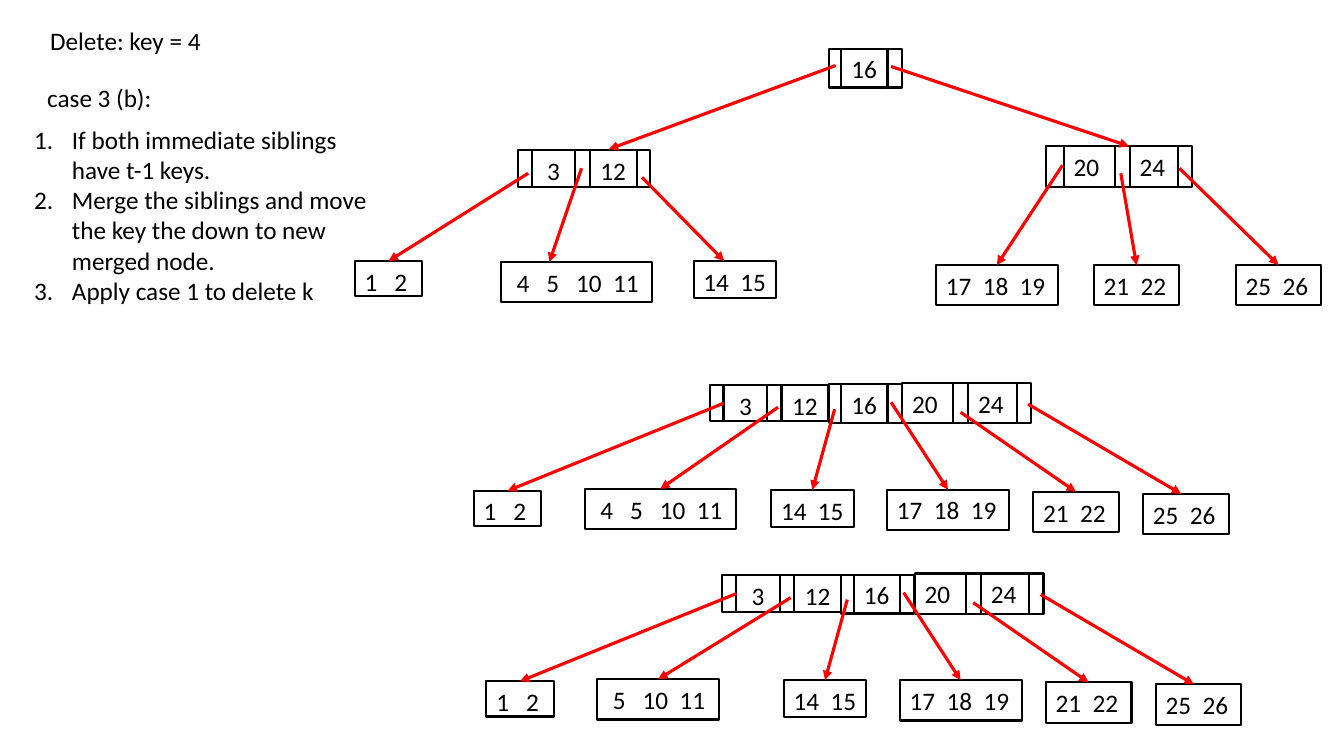
import pptx
import pptx.dml.color
import pptx.enum.shapes
import pptx.enum.text
import pptx.oxml.ns
import pptx.util
from lxml import etree

Pt = pptx.util.Pt
BLACK = pptx.dml.color.RGBColor(0, 0, 0)
RED = pptx.dml.color.RGBColor(255, 0, 0)
FONT = "Calibri"
FONT_SIZE = 18

# Nodes are rows of (key, width) cells; an empty key is a child pointer.
LEFT_CELLS = [("", 9.8), ("3", 31.2), ("", 10.2), ("12", 33.6), ("", 9.8)]
MIDDLE_CELLS = [("", 9), ("16", 33), ("", 10)]
RIGHT_CELLS = [("", 12.6), ("20", 36.6), ("", 10.6), ("24", 34.6), ("", 10.2)]

# Leaves: keys, (left, top, width, height), start of the arrow, options.
FIRST_TREE_LEAVES = [
    ("1 2", (253.4, 186.5, 48.2, 25.2), (377.3, 123.8), {}),
    ("4 5 10 11", (357.8, 187.2, 108, 28.8), (415.4, 120.2),
     {"lead": 4, "tip": 392.4}),
    ("14 15", (495.4, 186.5, 59, 26.4), (458.6, 126.7), {"tip": 517.3}),
    ("17 18 19", (668.5, 189.4, 87.1, 28.8), (758.9, 118.1), {}),
    ("21 22", (781.2, 189.4, 61.2, 28.8), (800.6, 123.8), {}),
    ("25 26", (882.7, 189.4, 61.2, 28.8), (842.4, 120.2), {}),
]
MERGED_TREE_LEAVES = [
    ("1 2", (338.4, 350.6, 48.2, 25.2), (517, 288), {}),
    ("14 15", (550.8, 349.9, 59, 26.4), (596.2, 292.3), {}),
    ("17 18 19", (633.6, 349.9, 87.1, 28.8), (636.5, 287.3), {}),
    ("21 22", (738, 351.4, 61.2, 28.8), (686.2, 294.5), {}),
    ("25 26", (816.5, 352.8, 61.2, 28.8), (734.4, 288.7), {"tip": 843.8}),
]


def add_element(parent, tag, **attributes):
    element = etree.SubElement(parent, pptx.oxml.ns.qn(tag))
    for name, value in attributes.items():
        element.set(name, str(value))
    return element


def write(frame, lines, inset_left=7.2, inset_right=7.2, tabs=(), numbered=False):
    """Fill a text frame, one paragraph a line, with optional tab stops or numbers."""
    frame.word_wrap = True
    frame.vertical_anchor = pptx.enum.text.MSO_ANCHOR.TOP
    frame.margin_left, frame.margin_right = Pt(inset_left), Pt(inset_right)
    for index, line in enumerate(lines):
        para = frame.paragraphs[0] if index == 0 else frame.add_paragraph()
        para.alignment = pptx.enum.text.PP_ALIGN.LEFT
        properties = para._p.get_or_add_pPr()
        if numbered:
            properties.set("marL", str(Pt(27)))
            properties.set("indent", str(-Pt(27)))
            add_element(properties, "a:buFont", typeface="+mj-lt")
            add_element(properties, "a:buAutoNum", type="arabicPeriod")
        if tabs:
            stops = add_element(properties, "a:tabLst")
            for position in tabs:
                add_element(stops, "a:tab", pos=Pt(position), algn="l")
        span = para.add_run()
        span.text = line
        span.font.name = FONT
        span.font.size = Pt(FONT_SIZE)
        span.font.color.rgb = BLACK


def add_text(page, lines, left, top, width, height, **text_format):
    box = page.shapes.add_textbox(Pt(left), Pt(top), Pt(width), Pt(height))
    write(box.text_frame, lines, **text_format)


def add_box(tree, left, top, width, height):
    box = tree.shapes.add_shape(pptx.enum.shapes.MSO_SHAPE.RECTANGLE,
                                Pt(left), Pt(top), Pt(width), Pt(height))
    box.shadow.inherit = False
    box.fill.background()
    box.line.color.rgb = BLACK
    box.line.width = Pt(1.5)
    return box


def add_node(tree, cells, left, top, height):
    for key, width in cells:
        box = add_box(tree, left, top, width, height)
        if key:
            write(box.text_frame, [key])
            if key in ("3", "12"):
                box.text_frame.paragraphs[0].alignment = pptx.enum.text.PP_ALIGN.CENTER
        left += width


def add_arrow(tree, start, end):
    arrow = tree.shapes.add_connector(pptx.enum.shapes.MSO_CONNECTOR.STRAIGHT,
                                      *(Pt(value) for value in (*start, *end)))
    arrow.line.color.rgb = RED
    arrow.line.width = Pt(2.25)
    add_element(arrow.line._get_or_add_ln(), "a:tailEnd", type="triangle")
    add_element(arrow._element.spPr, "a:effectLst")


def add_leaf(tree, keys, area, start, lead=0, tip=None):
    """Draw a leaf and its arrow, which ends at the top middle unless tip is given."""
    left, top, width, height = area
    keys = keys.split()
    tabs, position = [], 0
    for key in keys[:-1]:
        position += 21.3 if len(key) == 1 else 26.4
        tabs.append(position)
    box = add_box(tree, *area)
    write(box.text_frame, ["\t".join(keys)], inset_left=7.2 + lead,
          inset_right=0, tabs=tabs)
    add_arrow(tree, start, (tip or left + width / 2, top))


def add_first_tree(page):
    tree = page.shapes.add_group_shape()
    add_node(tree, MIDDLE_CELLS, 592, 34.8, 27.7)
    add_node(tree, LEFT_CELLS, 370, 107.3, 26)
    add_node(tree, RIGHT_CELLS, 747.2, 104.5, 28.8)
    add_arrow(tree, (596.9, 46.8), (434.9, 106.6))
    add_arrow(tree, (636.5, 47.5), (806.4, 104.4))
    for keys, area, start, options in FIRST_TREE_LEAVES:
        add_leaf(tree, keys, area, start, **options)


def add_merged_tree(page, second_keys, second_width):
    """Draw the tree with one five-key root; its second leaf varies."""
    tree = page.shapes.add_group_shape()
    add_node(tree, LEFT_CELLS[:-1], 507, 275, 26)
    add_node(tree, MIDDLE_CELLS, 592, 274.5, 27.7)
    add_node(tree, RIGHT_CELLS[1:], 644.4, 273.7, 28.8)
    for keys, area, start, options in MERGED_TREE_LEAVES:
        add_leaf(tree, keys, area, start, **options)
    add_leaf(tree, second_keys, (417.6, 349.2, second_width, 28.8),
             (555.8, 290.9), lead=4)
    return tree


def main():
    deck = pptx.Presentation()
    deck.slide_width, deck.slide_height = Pt(960), Pt(540)
    page = deck.slides.add_slide(deck.slide_layouts[6])
    add_first_tree(page)
    add_text(page, ["Delete: key = 4"], 28.8, 14.4, 183, 29)
    add_text(page, ["case 3 (b):"], 26.6, 55.4, 99.4, 29)
    add_text(page, [
        "If both immediate siblings have t-1 keys.",
        "Merge the siblings and move the key the down to new merged node.",
        "Apply case 1 to delete k",
    ], 17.3, 85, 260.6, 138.2, numbered=True)
    add_merged_tree(page, "4 5 10 11", 108)
    final_tree = add_merged_tree(page, "5 10 11", 87.1)
    final_tree.left += Pt(9)
    final_tree.top += Pt(136)
    deck.save("out.pptx")


if __name__ == "__main__":
    main()
